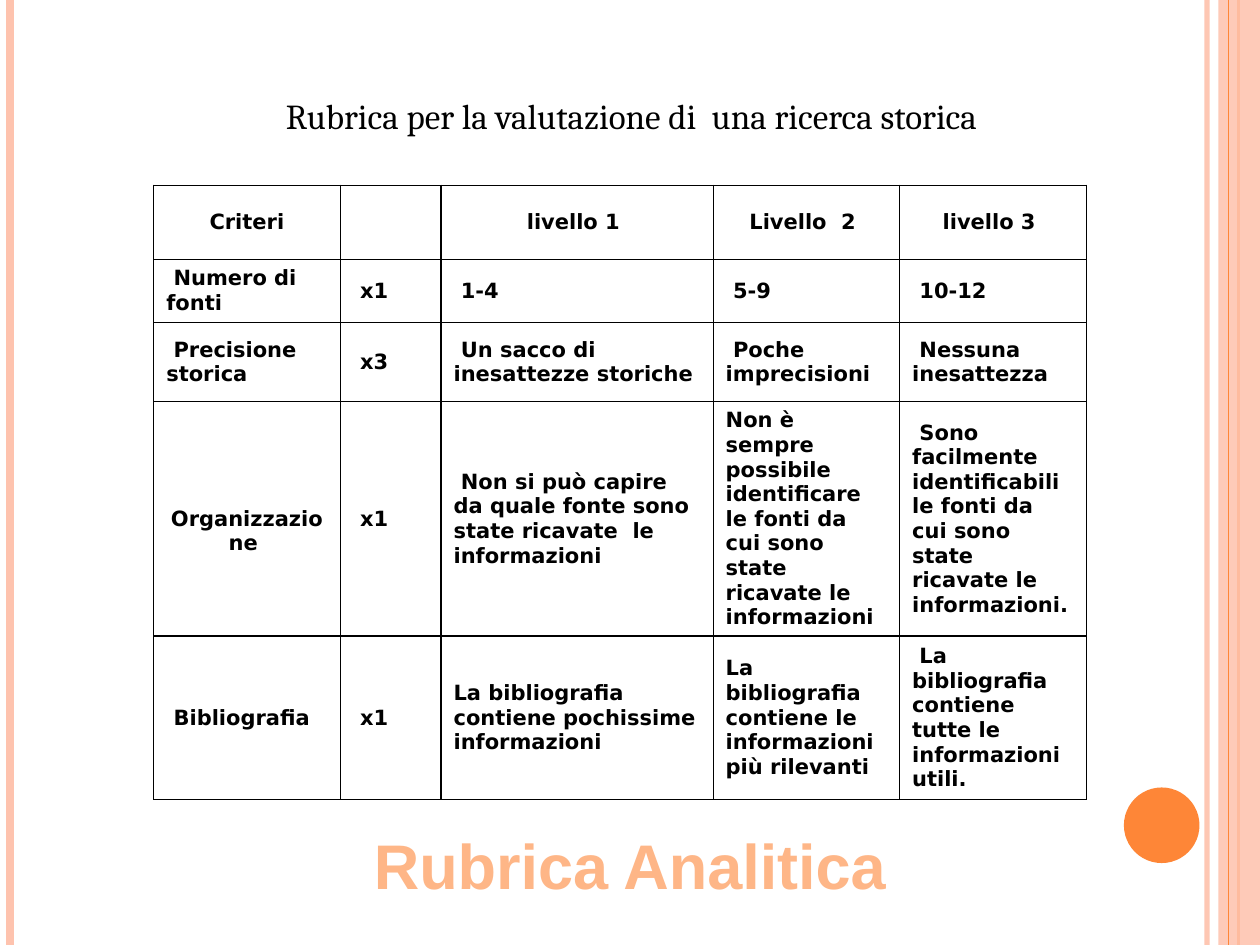
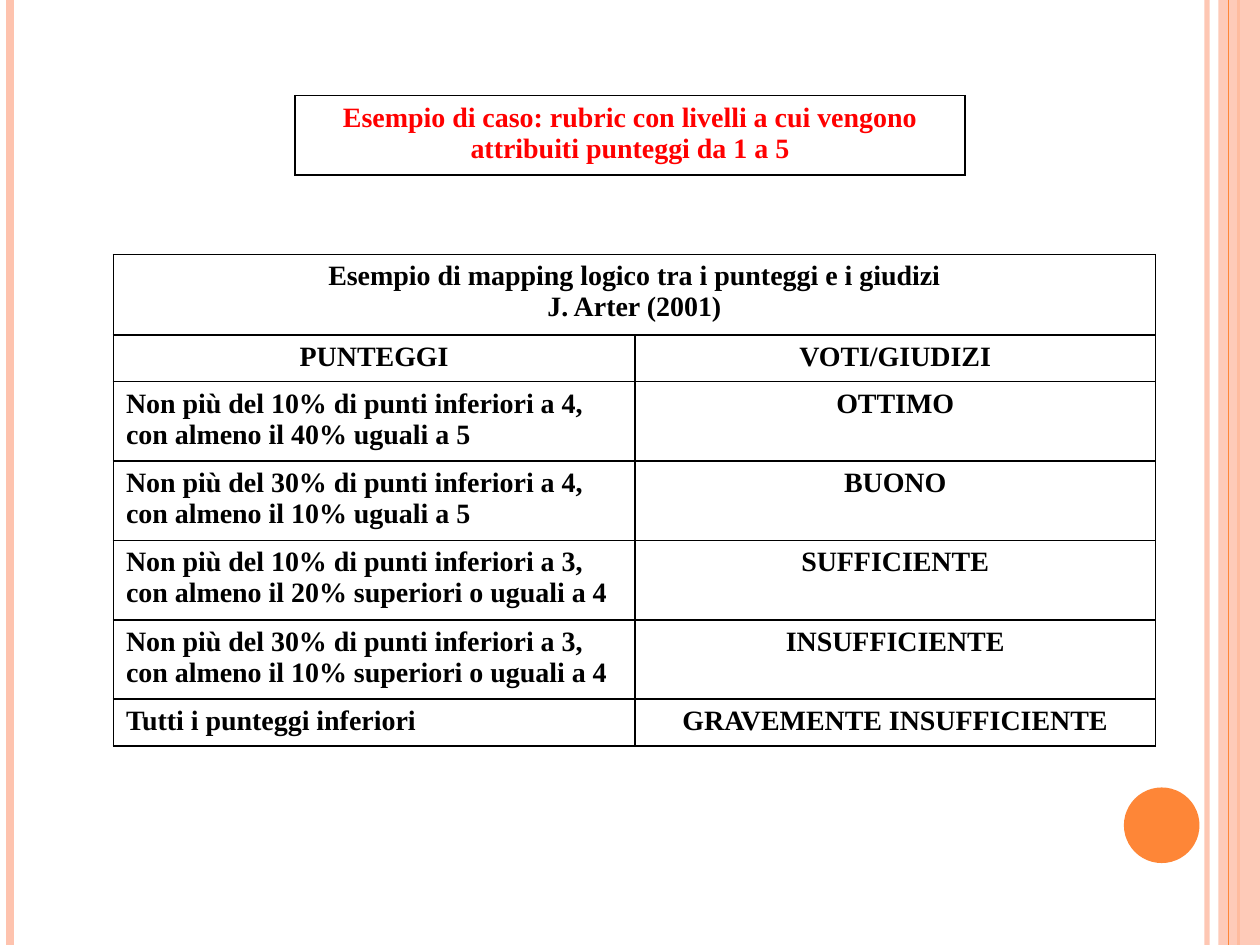
"""Build two slides on scoring rubrics, with shared side bands and ruled tables."""
from dataclasses import dataclass
from typing import Any, Callable

import pptx
import pptx.dml.color
import pptx.enum.shapes
import pptx.enum.text
import pptx.oxml
import pptx.oxml.ns
import pptx.util
from lxml import etree

Inches = pptx.util.Inches
Pt = pptx.util.Pt
Align = pptx.enum.text.PP_ALIGN
Anchor = pptx.enum.text.MSO_ANCHOR
Form = pptx.enum.shapes.MSO_SHAPE
qn = pptx.oxml.ns.qn


@dataclass(frozen=True)
class Theme:
    """Colours, fonts and type sizes of the deck."""
    ink: str = "000000"
    red: str = "FF0000"
    rose: str = "FEC3AE"
    orange: str = "FE8637"
    peach: str = "FEB687"
    serif: str = "Cambria"
    sans: str = "DejaVu Sans"
    roman: str = "Times New Roman"
    big: str = "Arial"
    title: int = 20
    small: int = 12
    body: int = 16
    label: int = 36


THEME = Theme()


@dataclass(frozen=True)
class Stripe:
    """A full-height line at one side of the slide."""
    left: float
    width: float
    tint: str
    alpha: int = 100


@dataclass(frozen=True)
class Block:
    """A filled shape of the slide frame."""
    form: Any
    box: tuple[float, float, float, float]
    tint: str
    alpha: int = 100


@dataclass(frozen=True)
class Grid:
    """A ruled table with its text style."""
    left: float
    top: float
    cols: list[float]
    rows: list[float]
    cells: list[list[str]]
    font: str
    size: int
    centred: Callable[[int, int], bool]
    tint: str = THEME.ink
    anchor: Any = Anchor.TOP
    rule: float = 1
    merge: bool = False


FRAME = [
    Stripe(9.58, 3, THEME.rose, 93),
    Stripe(0.08, 4.5, THEME.rose),
    Stripe(9.83, 1.5, THEME.orange),
    Block(Form.RECTANGLE, (9.67, 0, 0.33, 7.5), THEME.rose, 87),
    Stripe(9.75, 0.75, THEME.orange),
    Block(Form.OVAL, (8.92, 6.25, 0.6, 0.6), THEME.orange),
]

CRITERIA = Grid(
    1.22, 1.47, [1.48, 0.8, 2.16, 1.48, 1.48], [0.59, 0.5, 0.63, 1.7, 1.3],
    [
        [" Criteri ", "", "livello 1 ", "Livello  2 ", "livello 3 "],
        [" Numero di fonti", " x1", " 1-4", " 5-9", " 10-12"],
        [" Precisione storica", " x3", " Un sacco di inesattezze storiche",
         " Poche imprecisioni", " Nessuna inesattezza"],
        [" Organizzazione ", " x1",
         " Non si può capire da quale fonte sono state ricavate  le  informazioni",
         "Non è sempre possibile identificare le fonti da cui sono state "
         "ricavate le  informazioni",
         " Sono facilmente identificabili le fonti da cui sono state "
         "ricavate le informazioni."],
        [" Bibliografia", " x1", "La bibliografia contiene pochissime informazioni",
         "La bibliografia contiene le informazioni più rilevanti",
         " La bibliografia contiene tutte le informazioni utili."],
    ],
    THEME.sans, THEME.small, lambda row, col: row == 0 or (row, col) == (3, 0),
    anchor=Anchor.MIDDLE, rule=0.75)

HEADING = Grid(
    2.34, 0.76, [5.32], [0.63],
    [["Esempio di caso: rubric con livelli a cui vengono attribuiti punteggi da 1 a 5"]],
    THEME.roman, THEME.body, lambda row, col: True, tint=THEME.red)

GRADES = Grid(
    0.9, 2.02, [4.14, 4.13], [0.64, 0.37] + [0.63] * 4 + [0.37],
    [
        ["Esempio di mapping logico tra i punteggi e i giudizi\nJ. Arter (2001)", ""],
        ["PUNTEGGI", "VOTI/GIUDIZI"],
        ["Non più del 10% di punti inferiori a 4, con almeno il 40% uguali a 5", "OTTIMO"],
        ["Non più del 30% di punti inferiori a 4, con almeno il 10% uguali a 5", "BUONO"],
        ["Non più del 10% di punti inferiori a 3, con almeno il 20% superiori o uguali a 4",
         "SUFFICIENTE"],
        ["Non più del 30% di punti inferiori a 3, con almeno il 10% superiori o uguali a 4",
         "INSUFFICIENTE"],
        ["Tutti i punteggi inferiori", "GRAVEMENTE INSUFFICIENTE"],
    ],
    THEME.roman, THEME.body, lambda row, col: row < 2 or col == 1, merge=True)


def rgb(tint: str) -> Any:
    """Turn a hex string into a colour."""
    return pptx.dml.color.RGBColor.from_string(tint)


def write(frame: Any, text: str, *, font: str, size: int, tint: str = THEME.ink,
          bold: bool = False, align: Any = Align.CENTER, before: float = 0) -> None:
    """Fill a text frame, one paragraph for each line of text."""
    frame.text = text
    for para in frame.paragraphs:
        para.alignment = align
        para.space_before = Pt(before)
        for face in [para.font] + [run.font for run in para.runs]:
            face.name, face.size, face.bold = font, Pt(size), bold
            face.color.rgb = rgb(tint)


def paint(fill: Any, tint: str, alpha: int, root: Any) -> None:
    """Set a solid colour and its opacity."""
    fill.solid()
    fill.fore_color.rgb = rgb(tint)
    if alpha < 100:
        node = root.find(".//" + qn("a:srgbClr"))
        etree.SubElement(node, qn("a:alpha"), val=str(alpha * 1000))


def draw_stripe(slide: Any, part: Stripe, high: int) -> None:
    """Draw one full-height line."""
    left = Inches(part.left)
    line = slide.shapes.add_connector(
        pptx.enum.shapes.MSO_CONNECTOR.STRAIGHT, left, 0, left, high)
    line.line.width = Pt(part.width)
    root = line._element.spPr
    paint(line.line.fill, part.tint, part.alpha, root)
    etree.SubElement(root, qn("a:effectLst"))


def draw_block(slide: Any, part: Block) -> None:
    """Draw one filled shape."""
    shape = slide.shapes.add_shape(part.form, *map(Inches, part.box))
    shape.shadow.inherit = False
    shape.line.fill.background()
    paint(shape.fill, part.tint, part.alpha, shape._element.spPr)


def draw_frame(slide: Any, high: int) -> None:
    """Draw the bands and the disc that every slide shares."""
    for part in FRAME:
        if isinstance(part, Stripe):
            draw_stripe(slide, part, high)
        else:
            draw_block(slide, part)


def rule_cell(cell: Any, width: float) -> None:
    """Rule the four sides of a cell."""
    props = cell._tc.get_or_add_tcPr()
    for side in "LRTB":
        line = etree.SubElement(props, qn("a:ln" + side), w=str(int(Pt(width))))
        solid = etree.SubElement(line, qn("a:solidFill"))
        etree.SubElement(solid, qn("a:srgbClr"), val=THEME.ink)


def draw_grid(slide: Any, grid: Grid) -> None:
    """Draw a table from its grid."""
    table = slide.shapes.add_table(
        len(grid.rows), len(grid.cols), Inches(grid.left), Inches(grid.top),
        Inches(sum(grid.cols)), Inches(sum(grid.rows))).table
    table.first_row = table.horz_banding = False
    for col, width in zip(table.columns, grid.cols):
        col.width = Inches(width)
    for row, height in zip(table.rows, grid.rows):
        row.height = Inches(height)
    for i, line in enumerate(grid.cells):
        for j, text in enumerate(line):
            cell = table.cell(i, j)
            rule_cell(cell, grid.rule)
            cell.fill.background()
            cell.vertical_anchor = grid.anchor
            write(cell.text_frame, text, font=grid.font, size=grid.size,
                  tint=grid.tint, bold=True,
                  align=Align.CENTER if grid.centred(i, j) else Align.LEFT)
    if grid.merge:
        table.cell(0, 0).merge(table.cell(0, len(grid.cols) - 1))


def place(shape: Any, left: float, top: float, width: float, height: float) -> None:
    """Move and size a shape."""
    shape.left, shape.top = Inches(left), Inches(top)
    shape.width, shape.height = Inches(width), Inches(height)


def main() -> None:
    """Build and save the deck."""
    deck = pptx.Presentation()
    deck.slide_width, deck.slide_height = Inches(10), Inches(7.5)

    first = deck.slides.add_slide(deck.slide_layouts.get_by_name("Title Only"))
    draw_frame(first, deck.slide_height)
    title = first.shapes.title
    place(title, 1.95, 0.7, 6.13, 0.43)
    write(title.text_frame, "Rubrica per la valutazione di  una ricerca storica",
          font=THEME.serif, size=THEME.title)
    title.text_frame.word_wrap = False
    title.text_frame.vertical_anchor = Anchor.MIDDLE
    draw_grid(first, CRITERIA)
    label = first.shapes.add_textbox(
        Inches(2.32), Inches(6.51), Inches(5.36), Inches(0.7))
    label.text_frame.word_wrap = True
    write(label.text_frame, "Rubrica Analitica", font=THEME.big, size=THEME.label,
          tint=THEME.peach, bold=True, before=4)

    second = deck.slides.add_slide(deck.slide_layouts.get_by_name("Blank"))
    draw_frame(second, deck.slide_height)
    for grid in (HEADING, GRADES):
        draw_grid(second, grid)

    deck.save("out.pptx")


if __name__ == "__main__":
    main()
